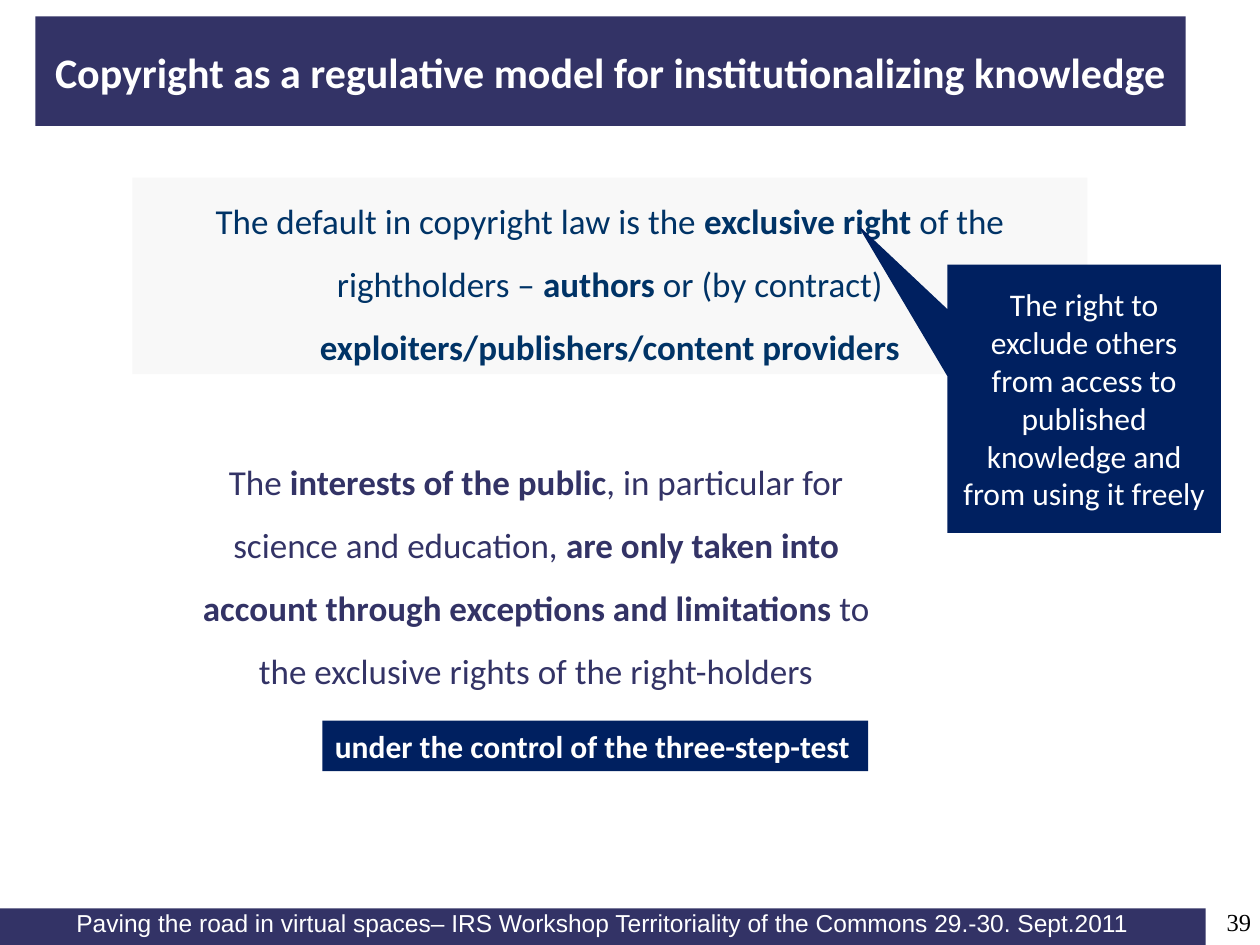
from dataclasses import dataclass

from pptx import Presentation
from pptx.dml.color import RGBColor
from pptx.enum.shapes import MSO_SHAPE
from pptx.enum.text import MSO_ANCHOR, MSO_AUTO_SIZE, PP_ALIGN
from pptx.util import Inches, Pt

RECT, CALLOUT = MSO_SHAPE.RECTANGLE, MSO_SHAPE.RECTANGULAR_CALLOUT
LEFT, CENTER, RIGHT = PP_ALIGN.LEFT, PP_ALIGN.CENTER, PP_ALIGN.RIGHT
TOP, MIDDLE = MSO_ANCHOR.TOP, MSO_ANCHOR.MIDDLE
NO_FIT = MSO_AUTO_SIZE.NONE

WIDTH, HEIGHT = 10, 7.5
COLORS = {
    "indigo": "333366",
    "navy": "002060",
    "blue": "003366",
    "pale": "F8F8F8",
    "white": "FFFFFF",
    "black": "000000",
}


@dataclass
class Area:
    x: float
    y: float
    w: float
    h: float

    def lengths(self) -> tuple:
        return tuple(Inches(v) for v in (self.x, self.y, self.w, self.h))


def rgb(name: str) -> RGBColor:
    return RGBColor.from_string(COLORS[name])


def write(sp, runs: list[tuple[str, bool]], *, size: int = 18, color: str = "white",
          font: str = "Calibri", align=CENTER, anchor=TOP, spacing: float = 1.0,
          insets: tuple = (0.1, 0.05, 0.1, 0.05)) -> None:
    tf = sp.text_frame
    tf.word_wrap = True
    tf.auto_size = NO_FIT
    tf.vertical_anchor = anchor
    tf.margin_left, tf.margin_top, tf.margin_right, tf.margin_bottom = map(Inches, insets)
    p = tf.paragraphs[0]
    p.alignment = align
    p.line_spacing = spacing
    for text, bold in runs:
        r = p.add_run()
        r.text = text
        r.font.name = font
        r.font.size = Pt(size)
        r.font.bold = bold
        r.font.color.rgb = rgb(color)


def panel(s, area: Area, fill: str, kind=RECT):
    sp = s.shapes.add_shape(kind, *area.lengths())
    sp.shadow.inherit = False
    sp.fill.solid()
    sp.fill.fore_color.rgb = rgb(fill)
    sp.line.fill.background()
    return sp


def main() -> None:
    prs = Presentation()
    prs.slide_width, prs.slide_height = Inches(WIDTH), Inches(HEIGHT)
    s = prs.slides.add_slide(prs.slide_layouts[5])

    footer = panel(s, Area(0, HEIGHT - 0.29, 9.57, 0.29), "indigo")
    write(footer, [("Paving the road in virtual spaces– IRS Workshop Territoriality "
                    "of the Commons 29.-30. Sept.2011", False)],
          size=14, font="Arial", insets=(0, 0, 0, 0))

    title = s.shapes.title
    title.left, title.top, title.width, title.height = Area(0.28, 0.13, 9.13, 0.87).lengths()
    title.fill.solid()
    title.fill.fore_color.rgb = rgb("indigo")
    write(title, [("Copyright as a regulative model for institutionalizing knowledge", True)],
          size=24, anchor=MIDDLE)

    number = s.shapes.add_textbox(*Area(9.25, HEIGHT - 0.52, 0.68, 0.52).lengths())
    write(number, [("39", False)], size=14, color="black", font="Times New Roman",
          align=RIGHT, insets=(0, 0.22, 0, 0))

    default = panel(s, Area(1.05, 1.41, 7.58, 1.56), "pale")
    write(default, [("The default in copyright law is the ", False),
                    ("exclusive right ", True),
                    ("of the rightholders – ", False),
                    ("authors", True),
                    (" or (by contract) ", False),
                    ("exploiters/publishers/content providers", True)],
          size=20, color="blue", spacing=1.5, insets=(0.02, 0.01, 0.02, 0.01))

    callout = panel(s, Area(7.52, 2.1, 2.17, 2.13), "navy", CALLOUT)
    callout.adjustments[0], callout.adjustments[1] = -0.83, -0.65
    write(callout, [("The right to exclude others from access to published knowledge "
                     "and from using it freely", False)], anchor=MIDDLE)

    interests = s.shapes.add_textbox(*Area(1.3, 3.44, 5.91, 2.16).lengths())
    write(interests, [("The ", False),
                      ("interests of the public", True),
                      (", in particular for science and education, ", False),
                      ("are only taken into account through exceptions and limitations ", True),
                      ("to the exclusive rights of the right-holders", False)],
          size=20, color="indigo", spacing=1.5)

    control = panel(s, Area(2.56, 5.72, 4.33, 0.4), "navy")
    write(control, [("under the control of the three-step-test", True)], align=LEFT)

    prs.save("out.pptx")


if __name__ == "__main__":
    main()
